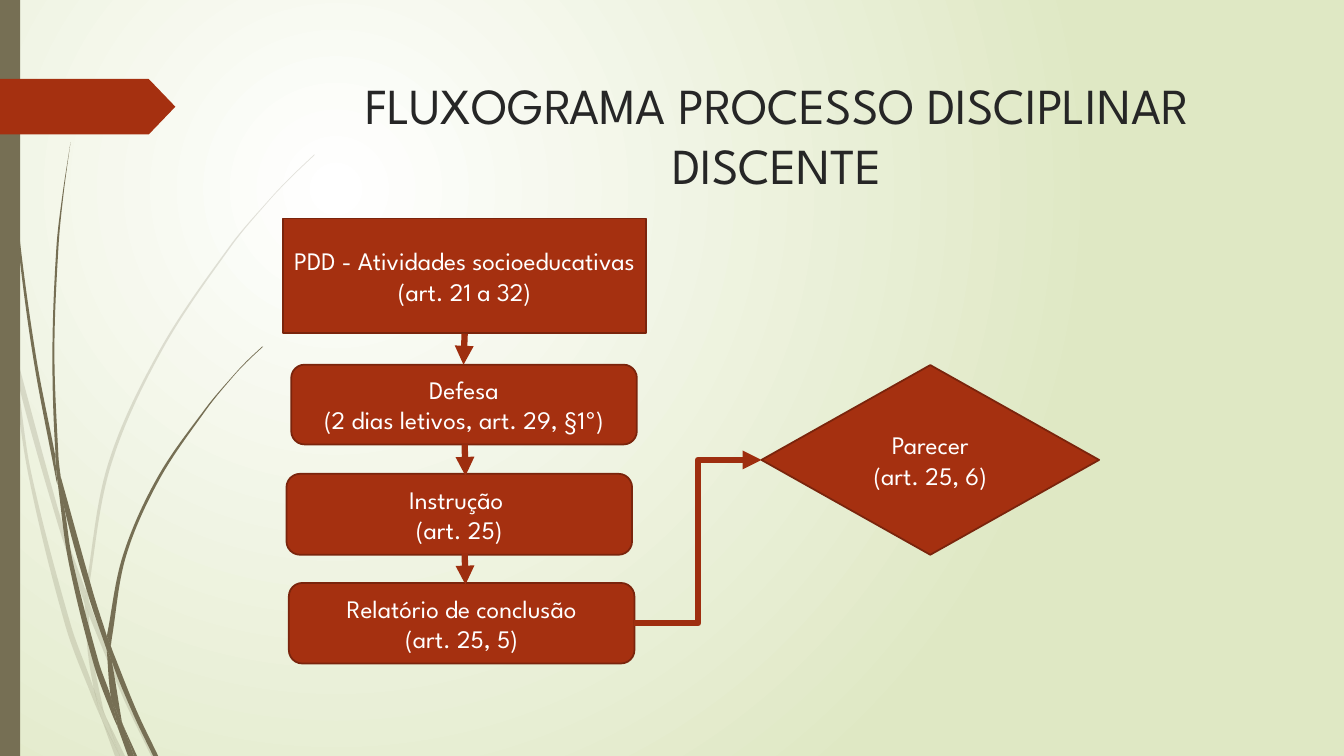
"""Builds the slide with the flowchart of the student disciplinary process."""
from dataclasses import dataclass
from math import dist

from lxml.etree import SubElement
from pptx import Presentation
from pptx.dml.color import RGBColor
from pptx.enum.shapes import MSO_CONNECTOR, MSO_SHAPE
from pptx.enum.text import MSO_ANCHOR, MSO_AUTO_SIZE, PP_ALIGN
from pptx.oxml.ns import qn
from pptx.util import Cm, Pt


@dataclass(frozen=True)
class Theme:
    font: str = "League Spartan"
    title_size: float = 36
    step_size: float = 18
    border: float = 1.25
    arrow: float = 4.5
    ink: str = "262626"
    white: str = "FFFFFF"
    rust: str = "A53010"
    rust_border: str = "7A240C"
    rust_arrow: str = "9E2E0F"
    olive: str = "766F54"
    pale_green: str = "DFE8C4"


PALE_BLADES = [
    ([(0.11, 3.5), (0.09, 3.22), (0, 2.82)], [(0, 2.99), (0.1, 3.44), (0.11, 3.5)]),
    ([(0.14, 3.45), (0.17, 3.76), (0.58, 5.22), (0.84, 5.99)],
     [(0.85, 5.86), (0.62, 5.2), (0.14, 3.45)]),
    ([(0.88, 6.1), (1.23, 6.94), (1.5, 7.5)],
     [(1.55, 7.5), (1.27, 6.92), (0.92, 6.07), (0.88, 5.96)]),
    ([(1.05, 7.11), (1.19, 7.5)], [(1.24, 7.5), (1.05, 7.11)]),
    ([(0.11, 3.5), (0.28, 4.7), (0.65, 6.21), (0.92, 6.93), (1.01, 7.14)],
     [(1.01, 7.14), (0.99, 7.07), (0.93, 6.83), (0.7, 6.19), (0.31, 4.69), (0.17, 3.76),
      (0.11, 3.5)]),
    ([(0.84, 5.99), (0.87, 6.46), (0.93, 6.83), (0.96, 6.92), (1.05, 7.11)],
     [(1.05, 7.11), (1.03, 7.06), (0.91, 6.46), (0.88, 6.1), (0.88, 6.08)]),
    ([(3.12, 1.53), (2.89, 1.75), (2.68, 1.97), (2.28, 2.44), (1.58, 3.48), (1.07, 4.61),
      (0.85, 5.84), (0.85, 5.86)],
     [(0.88, 5.96), (0.88, 5.84), (1.1, 4.62), (1.6, 3.49), (2.29, 2.45), (2.68, 1.98),
      (2.9, 1.75), (3.12, 1.54)]),
    ([(1.01, 7.14), (1.14, 7.5)], [(1.19, 7.5), (1.01, 7.14)]),
    ([(0.85, 5.86), (0.84, 5.99)], [(0.88, 6.08), (0.88, 6.1), (0.88, 5.96)]),
    ([(0.93, 6.83), (0.99, 7.07), (1.01, 7.14), (1.19, 7.5)],
     [(1.19, 7.5), (1.05, 7.11), (0.96, 6.92), (0.93, 6.83)]),
]
DARK_BLADES = [
    ([(0.03, 0), (0.04, 0.48), (0.07, 1.1), (0.17, 2.33), (0.33, 3.55), (0.56, 4.77),
      (0.57, 4.81)],
     [(0.55, 4.57), (0.55, 4.53), (0.36, 3.55), (0.19, 2.32), (0.08, 1.09), (0.05, 0.48),
      (0.04, 0)]),
    ([(0.6, 4.72), (0.64, 5.05), (0.88, 5.92), (1.06, 6.45)],
     [(1.06, 6.33), (1.06, 6.31), (0.93, 5.9), (0.6, 4.72)]),
    ([(1.1, 6.41), (1.11, 6.56), (1.32, 7.08), (1.52, 7.5)],
     [(1.57, 7.5), (1.36, 7.06), (1.13, 6.49), (1.1, 6.41)]),
    ([(0.57, 4.77), (0.68, 5.57), (0.93, 6.59), (1.11, 7.08), (1.17, 7.22)],
     [(1.17, 7.22), (1.16, 7.17), (1.1, 6.91), (0.98, 6.57), (0.72, 5.56), (0.64, 5.05),
      (0.57, 4.77)]),
    ([(0.7, 1.41), (0.62, 1.93), (0.56, 2.45), (0.52, 3.49), (0.55, 4.49), (0.6, 4.72)],
     [(0.6, 4.72), (0.58, 4.53), (0.54, 3.49), (0.58, 2.45), (0.63, 1.93), (0.7, 1.41)]),
    ([(1.22, 7.19), (1.33, 7.5)], [(1.36, 7.5), (1.22, 7.19)]),
    ([(0.55, 4.49), (0.55, 4.53), (0.57, 4.77), (0.64, 5.05)],
     [(0.64, 5.05), (0.6, 4.72), (0.55, 4.49)]),
    ([(2.6, 3.44), (2.45, 3.58), (2.31, 3.73), (2.04, 4.05), (1.56, 4.74), (1.22, 5.51),
      (1.06, 6.31)],
     [(1.1, 6.41), (1.11, 6.33), (1.25, 5.52), (1.58, 4.76), (2.05, 4.06), (2.31, 3.74),
      (2.45, 3.59), (2.61, 3.44)]),
    ([(1.17, 7.22), (1.27, 7.5)], [(1.31, 7.5), (1.17, 7.22)]),
    ([(1.06, 6.45), (1.1, 6.91), (1.16, 7.06), (1.22, 7.19)],
     [(1.22, 7.19), (1.21, 7.16), (1.11, 6.56), (1.09, 6.51), (1.06, 6.45)]),
    ([(1.06, 6.31), (1.06, 6.45)], [(1.09, 6.51), (1.11, 6.56), (1.1, 6.41), (1.06, 6.31)]),
    ([(1.1, 6.91), (1.16, 7.17), (1.17, 7.22), (1.3, 7.5)],
     [(1.33, 7.5), (1.22, 7.19), (1.16, 7.06), (1.1, 6.91)]),
]


def bezier(knots):
    padded = [knots[0], *knots, knots[-1]]
    points = []
    for a, b, c, d in zip(padded, padded[1:], padded[2:], padded[3:]):
        leave, arrive = (dist(b, c) / 3 / dist(*ends) for ends in ((a, c), (b, d)))
        points += [tuple(q + (r - p) * leave for p, q, r in zip(a, b, c)),
                   tuple(r - (s - q) * arrive for q, r, s in zip(b, c, d)), c]
    return points


def write(frame, text, *, font, size, color, anchor=MSO_ANCHOR.MIDDLE):
    frame.text = text
    frame.word_wrap = True
    frame.auto_size = MSO_AUTO_SIZE.NONE
    frame.vertical_anchor = anchor
    for line in frame.paragraphs:
        line.alignment = PP_ALIGN.CENTER
        for run in line.runs:
            run.font.name = font
            run.font.size = Pt(size)
            run.font.color.rgb = RGBColor.from_string(color)


class FlowSlide:
    def __init__(self, deck, theme):
        self.theme = theme
        self.slide = deck.slides.add_slide(deck.slide_layouts[5])
        self.shapes = self.slide.shapes

    def background(self):
        fill = self.slide.background.fill
        fill.gradient()
        for stop, color in zip(fill.gradient_stops, (self.theme.white, self.theme.pale_green)):
            stop.color.rgb = RGBColor.from_string(color)
        linear = next(self.slide.element.iter(qn("a:lin")))
        gradient = linear.getparent()
        gradient.remove(linear)
        radial = SubElement(gradient, qn("a:path"), {"path": "circle"})
        SubElement(radial, qn("a:fillToRect"), l="50000", t="50000", r="100000", b="100000")

    def paint(self, shape, color, border=None):
        shape.shadow.inherit = False
        shape.fill.solid()
        shape.fill.fore_color.rgb = RGBColor.from_string(color)
        if border:
            shape.line.color.rgb = RGBColor.from_string(border)
            shape.line.width = Pt(self.theme.border)
        else:
            shape.line.fill.background()

    def grass(self, blades, opacity=100):
        tuft = self.shapes.add_group_shape()
        for down, up in blades:
            joint = [down[-1], up[0], up[0]] if down[-1] != up[0] else []
            outline = [(Cm(2.54 * x), Cm(2.54 * y))
                       for x, y in [down[0], *bezier(down), *joint, *bezier(up)]]
            builder = tuft.shapes.build_freeform(*outline[0])
            builder.add_line_segments(outline[1:])
            blade = builder.convert_to_shape()
            self.paint(blade, self.theme.olive)
            lines = list(blade._element.iter(qn("a:lnTo")))
            for first, second, last in zip(lines[::3], lines[1::3], lines[2::3]):
                first.tag = qn("a:cubicBezTo")
                for extra in (second, last):
                    first.append(extra[0])
                    extra.getparent().remove(extra)
            if opacity < 100:
                tint = blade._element.spPr.find(qn("a:solidFill"))[0]
                SubElement(tint, qn("a:alpha"), val=str(opacity * 1000))

    def ornament(self, kind, box, color):
        shape = self.shapes.add_shape(kind, *map(Cm, box))
        self.paint(shape, color)
        return shape

    def title(self, text, box):
        heading = self.shapes.title
        heading.left, heading.top, heading.width, heading.height = map(Cm, box)
        write(heading.text_frame, text, font=self.theme.font, size=self.theme.title_size,
              color=self.theme.ink, anchor=MSO_ANCHOR.TOP)

    def step(self, kind, box, text):
        shape = self.shapes.add_shape(kind, *map(Cm, box))
        self.paint(shape, self.theme.rust, self.theme.rust_border)
        write(shape.text_frame, text, font=self.theme.font, size=self.theme.step_size,
              color=self.theme.white)
        return shape

    def arrow(self, start, end, kind=MSO_CONNECTOR.STRAIGHT):
        link = self.shapes.add_connector(kind, *map(Cm, (*start, *end)))
        link.line.color.rgb = RGBColor.from_string(self.theme.rust_arrow)
        link.line.width = Pt(self.theme.arrow)
        properties = link._element.spPr
        SubElement(properties.find(qn("a:ln")), qn("a:tailEnd"), type="triangle")
        SubElement(properties, qn("a:effectLst"))
        return link


def main():
    deck = Presentation()
    deck.slide_width, deck.slide_height = Cm(33.87), Cm(19.05)
    theme = Theme()
    flow = FlowSlide(deck, theme)
    flow.background()
    flow.grass(PALE_BLADES, opacity=20)
    flow.grass(DARK_BLADES)
    flow.ornament(MSO_SHAPE.RECTANGLE, (0, 0, 0.51, 19.05), theme.olive)
    tag = flow.ornament(MSO_SHAPE.PENTAGON, (0, 1.99, 4.42, 1.4), theme.rust)
    tag.adjustments[0] = 0.48
    flow.title("FLUXOGRAMA PROCESSO DISCIPLINAR DISCENTE", (7.2, 1.73, 24.77, 3.56))
    rounded = MSO_SHAPE.FLOWCHART_ALTERNATE_PROCESS
    flow.step(MSO_SHAPE.FLOWCHART_PROCESS, (7.13, 5.51, 9.16, 2.89),
              "PDD - Atividades socioeducativas\n(art. 21 a 32)")
    flow.step(rounded, (7.34, 9.19, 8.71, 2.01), "Defesa\n(2 dias letivos, art. 29, §1º)")
    flow.step(rounded, (7.22, 11.94, 8.71, 2.04), "Instrução \n(art. 25)")
    report = flow.step(rounded, (7.28, 14.69, 8.71, 2.03),
                       "Relatório de conclusão\n(art. 25, 5)")
    opinion = flow.step(MSO_SHAPE.FLOWCHART_DECISION, (19.19, 9.2, 8.51, 4.78),
                        "Parecer\n(art. 25, 6)")
    for top, end in ((8.41, (11.68, 9.19)), (11.2, (11.73, 11.99)), (13.94, (11.73, 14.73))):
        flow.arrow((11.71, top), end)
    verdict = flow.arrow((15.99, 15.7), (19.19, 11.59), MSO_CONNECTOR.ELBOW)
    verdict.begin_connect(report, 3)
    verdict.end_connect(opinion, 1)
    deck.save("out.pptx")


if __name__ == "__main__":
    main()
